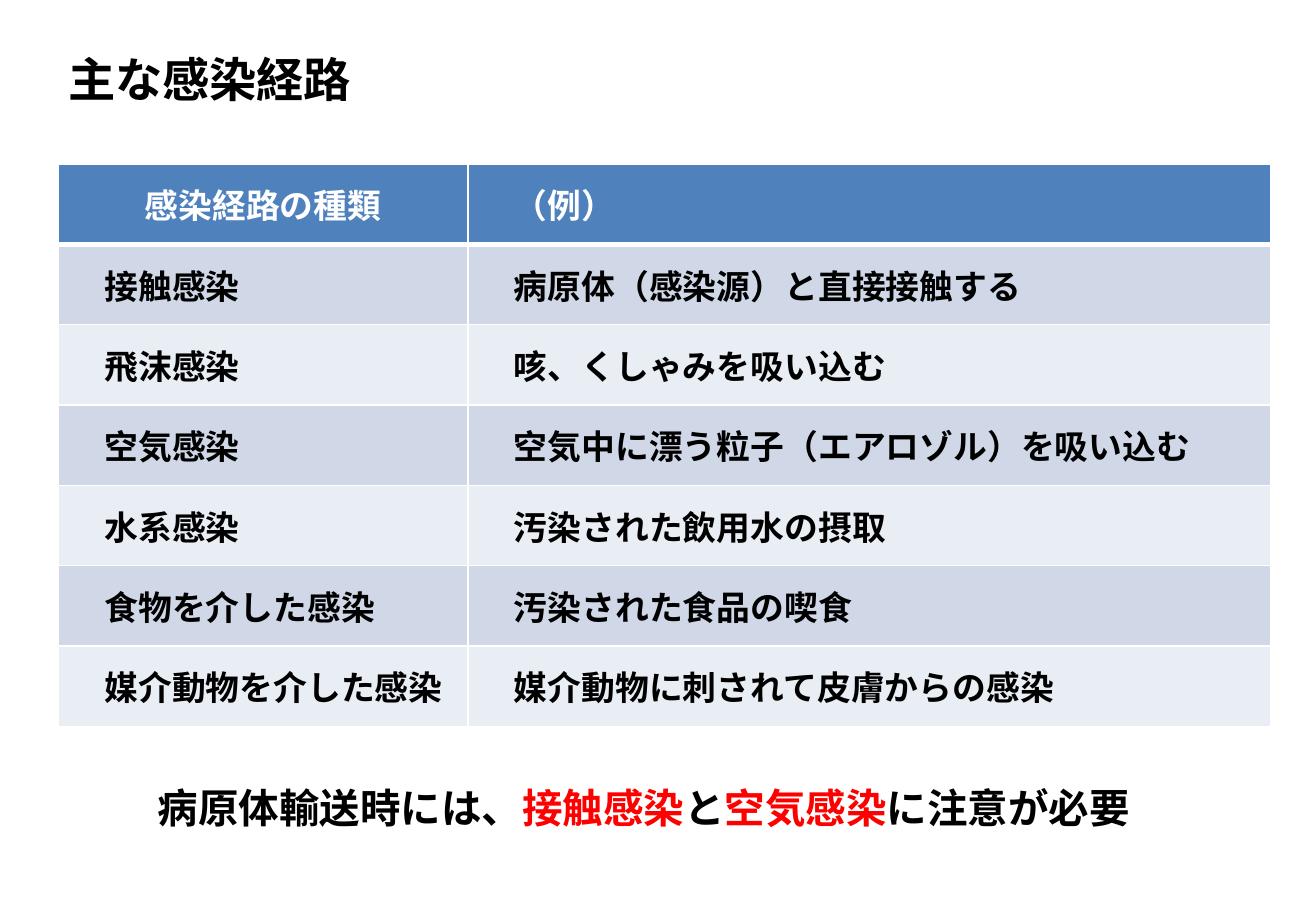
from dataclasses import dataclass
from typing import NamedTuple

from lxml import etree
from pptx import Presentation
from pptx.dml.color import RGBColor
from pptx.enum.text import MSO_ANCHOR, MSO_AUTO_SIZE, PP_ALIGN
from pptx.oxml.ns import qn
from pptx.util import Inches, Pt

LEFT, CENTER = PP_ALIGN.LEFT, PP_ALIGN.CENTER
TOP, MIDDLE = MSO_ANCHOR.TOP, MSO_ANCHOR.MIDDLE
GROW = MSO_AUTO_SIZE.SHAPE_TO_FIT_TEXT


@dataclass(frozen=True)
class Theme:
    font: str = "Noto Sans CJK JP"
    text: str = "000000"
    white: str = "FFFFFF"
    alert: str = "FF0000"
    header: str = "4F81BD"
    bands: tuple = ("D0D8E8", "E9EDF4")
    title_size: int = 28
    cell_size: int = 20
    note_size: int = 24


class Box(NamedTuple):
    left: float
    top: float
    width: float
    height: float

    def emu(self) -> list:
        return [Inches(v) for v in self]


class Route(NamedTuple):
    kind: str
    example: str


THEME = Theme()
SLIDE_W, SLIDE_H = 10.83, 7.5
TITLE_BOX = Box(0.46, 0.36, 2.57, 0.57)
TABLE_BOX = Box(0.48, 1.35, 9.98, 4.63)
NOTE_BOX = Box(1.2, 6.4, 8.43, 0.5)
KIND_W = 3.37
CELL_INDENT = 0.38  # normal margin plus one character

HEADER = Route("感染経路の種類", "（例）")
ROUTES = [
    Route("接触感染", "病原体（感染源）と直接接触する"),
    Route("飛沫感染", "咳、くしゃみを吸い込む"),
    Route("空気感染", "空気中に漂う粒子（エアロゾル）を吸い込む"),
    Route("水系感染", "汚染された飲用水の摂取"),
    Route("食物を介した感染", "汚染された食品の喫食"),
    Route("媒介動物を介した感染", "媒介動物に刺されて皮膚からの感染"),
]
NOTE = [
    ("病原体輸送時には、", THEME.text),
    ("接触感染", THEME.alert),
    ("と", THEME.text),
    ("空気感染", THEME.alert),
    ("に注意が必要", THEME.text),
]


def add_text(p, text: str, *, size: int, color: str = THEME.text, align=LEFT) -> None:
    p.alignment = align
    r = p.add_run()
    r.text = text
    r.font.size = Pt(size)
    r.font.bold = True
    r.font.color.rgb = RGBColor.from_string(color)
    r.font.name = THEME.font
    etree.SubElement(r.font._element, qn("a:ea"), typeface=THEME.font)


def set_borders(cell, bottom: float, top: float) -> None:
    tc_pr = cell._tc.get_or_add_tcPr()
    for side, width in (("L", 1), ("R", 1), ("T", top), ("B", bottom)):
        ln = etree.SubElement(tc_pr, qn(f"a:ln{side}"), w=str(Pt(width)))
        fill = etree.SubElement(ln, qn("a:solidFill"))
        etree.SubElement(fill, qn("a:srgbClr"), val=THEME.white)


def add_routes(slide) -> None:
    rows = [HEADER, *ROUTES]
    table = slide.shapes.add_table(len(rows), 2, *TABLE_BOX.emu()).table
    table.columns[0].width = Inches(KIND_W)
    table.columns[1].width = Inches(TABLE_BOX.width - KIND_W)
    for i, route in enumerate(rows):
        is_header = i == 0
        table.rows[i].height = Inches(TABLE_BOX.height / len(rows))
        fill = THEME.header if is_header else THEME.bands[(i - 1) % 2]
        for j, text in enumerate(route):
            cell = table.cell(i, j)
            centered = is_header and j == 0
            set_borders(cell, bottom=3 if is_header else 1, top=3 if i == 1 else 1)
            cell.fill.solid()
            cell.fill.fore_color.rgb = RGBColor.from_string(fill)
            cell.vertical_anchor = MIDDLE
            if not centered:
                cell.margin_left = Inches(CELL_INDENT)
            add_text(cell.text_frame.paragraphs[0], text, size=THEME.cell_size,
                     color=THEME.white if is_header else THEME.text,
                     align=CENTER if centered else LEFT)


def main() -> None:
    prs = Presentation()
    prs.slide_width, prs.slide_height = Inches(SLIDE_W), Inches(SLIDE_H)
    slide = prs.slides.add_slide(prs.slide_layouts[5])

    # Title
    sp = slide.shapes.title
    sp.left, sp.top, sp.width, sp.height = TITLE_BOX.emu()
    tf = sp.text_frame
    tf.word_wrap, tf.auto_size, tf.vertical_anchor = False, GROW, TOP
    add_text(tf.paragraphs[0], "主な感染経路", size=THEME.title_size)

    # Table of infection routes
    add_routes(slide)

    # Closing note
    tf = slide.shapes.add_textbox(*NOTE_BOX.emu()).text_frame
    tf.word_wrap, tf.auto_size = True, GROW
    for text, color in NOTE:
        add_text(tf.paragraphs[0], text, size=THEME.note_size, color=color)

    prs.save("out.pptx")


if __name__ == "__main__":
    main()
